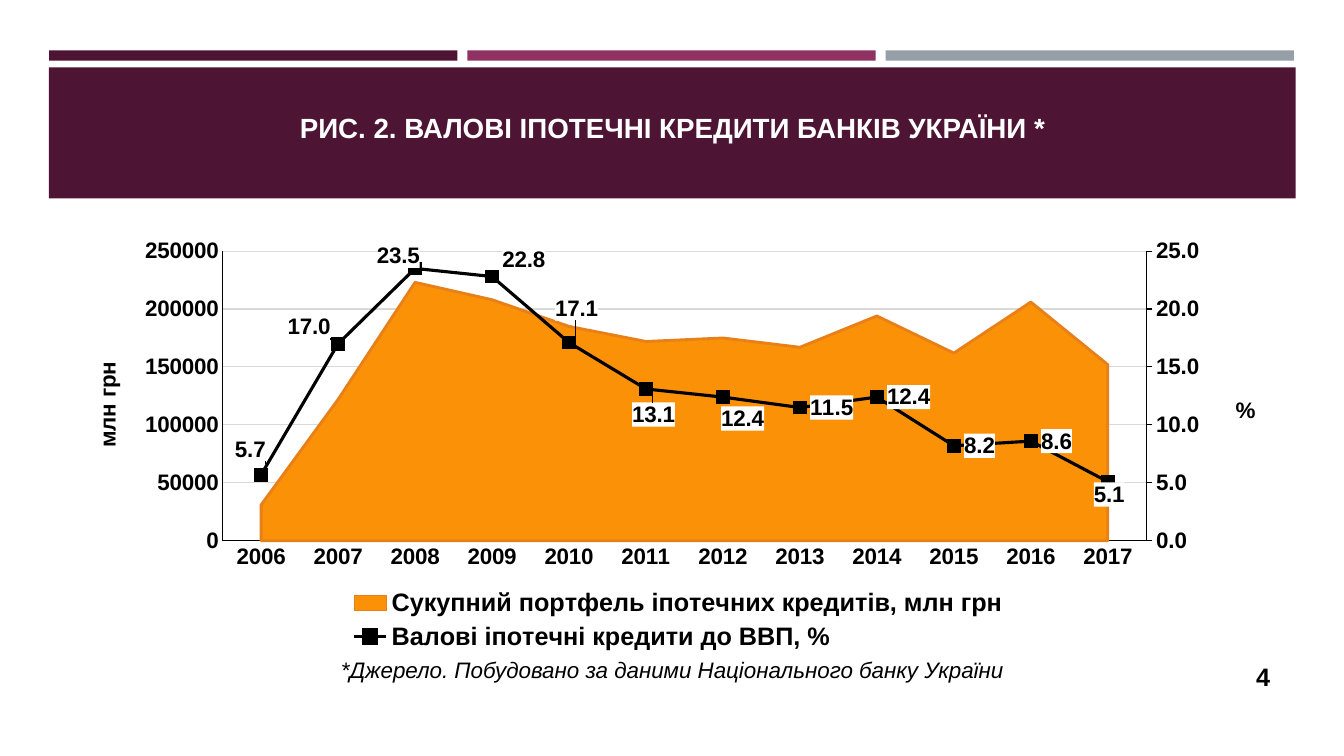
import copy
import dataclasses

import lxml.etree
import pptx
import pptx.chart.axis
import pptx.chart.data
import pptx.dml.color
import pptx.enum.chart
import pptx.enum.shapes
import pptx.enum.text
import pptx.oxml
import pptx.oxml.ns
import pptx.util

Cm, Pt, qn = pptx.util.Cm, pptx.util.Pt, pptx.oxml.ns.qn
Align, Anchor = pptx.enum.text.PP_ALIGN, pptx.enum.text.MSO_ANCHOR
Tick = pptx.enum.chart.XL_TICK_MARK
RIGHT_LABEL = pptx.enum.chart.XL_LABEL_POSITION.RIGHT
BLACK, WHITE, PLUM = "000000", "FFFFFF", "4D1434"
LEFT, WIDTH = 1.63, 30.63


@dataclasses.dataclass
class Bar:
    left: float
    top: float
    width: float
    height: float
    color: str


@dataclasses.dataclass
class LabelShift:
    point: int
    x: float
    y: float
    fill: str | None = None


BARS = [Bar(1.24 + 10.54 * i, 1.27, 10.29, 0.26, color)
        for i, color in enumerate([PLUM, "903163", "969FA7"])]
BARS.append(Bar(1.23, 1.7, 31.42, 3.3, PLUM))

PORTFOLIO = [31000, 122000, 223000, 208000, 185000, 172000,
             175000, 167000, 194000, 162000, 206000, 152000]
GDP_SHARE = [5.7, 17.0, 23.5, 22.8, 17.1, 13.1, 12.4, 11.5, 12.4, 8.2, 8.6, 5.1]
LABEL_SHIFTS = [
    LabelShift(0, -0.03, -0.06), LabelShift(1, -0.05, -0.04),
    LabelShift(2, -0.04, -0.03), LabelShift(3, 0, -0.04),
    LabelShift(4, -0.02, -0.08), LabelShift(5, -0.02, 0.06, WHITE),
    LabelShift(6, -0.01, 0.05, WHITE), LabelShift(11, -0.02, 0.03, WHITE),
]


def rgb(color: str) -> pptx.dml.color.RGBColor:
    return pptx.dml.color.RGBColor.from_string(color)


def set_font(font, size: float, color: str = BLACK, bold: bool = True,
             italic: bool = False) -> None:
    font.name, font.size, font.bold, font.italic = "Arial", Pt(size), bold, italic
    font.color.rgb = rgb(color)


def set_line(line, color: str, width: float) -> None:
    line.color.rgb = rgb(color)
    line.width = Pt(width)


def write_text(frame, text: str, *, size: float, align: Align = Align.CENTER,
               **font_format) -> None:
    para = frame.paragraphs[0]
    para.alignment = align
    span = para.add_run()
    span.text = text
    set_font(span.font, size, **font_format)


def write_box(box, text: str, **text_format) -> None:
    box.text_frame.word_wrap = True
    box.text_frame.vertical_anchor = Anchor.MIDDLE
    write_text(box.text_frame, text, **text_format)


def add_text(page, left: float, top: float, width: float, height: float,
             text: str, **text_format) -> None:
    box = page.shapes.add_textbox(Cm(left), Cm(top), Cm(width), Cm(height))
    write_box(box, text, **text_format)


def add_bar(page, bar: Bar) -> None:
    shape = page.shapes.add_shape(
        pptx.enum.shapes.MSO_SHAPE.RECTANGLE,
        Cm(bar.left), Cm(bar.top), Cm(bar.width), Cm(bar.height))
    shape.shadow.inherit = False
    shape.fill.solid()
    shape.fill.fore_color.rgb = rgb(bar.color)
    shape.line.fill.background()


def set_layout(parent, index: int, **values) -> None:
    """Place a chart part by fractions of the chart area."""
    for old in parent.findall(qn("c:layout")):
        parent.remove(old)
    layout = lxml.etree.Element(qn("c:layout"))
    manual = lxml.etree.SubElement(layout, qn("c:manualLayout"))
    for name, value in values.items():
        lxml.etree.SubElement(manual, qn(f"c:{name}")).set("val", str(value))
    parent.insert(index, layout)


def fill_labels(element, color: str) -> None:
    namespaces = pptx.oxml.ns.nsdecls("c", "a")
    element.find(qn("c:txPr")).addprevious(pptx.oxml.parse_xml(
        f'<c:spPr {namespaces}><a:solidFill><a:srgbClr val="{color}"/>'
        "</a:solidFill></c:spPr>"))


def split_to_line(plot_area) -> None:
    """Move the second series to a line plot with its own right axis."""
    area_plot = plot_area.find(qn("c:areaChart"))
    line_plot = pptx.oxml.parse_xml(
        f'<c:lineChart {pptx.oxml.ns.nsdecls("c")}><c:grouping val="standard"/>'
        '<c:varyColors val="0"/><c:marker val="1"/><c:axId val="501"/>'
        '<c:axId val="502"/></c:lineChart>')
    line_plot.insert(2, area_plot.findall(qn("c:ser"))[1])
    area_plot.addnext(line_plot)

    left_axis = plot_area.find(qn("c:valAx"))
    categories = copy.deepcopy(plot_area.find(qn("c:catAx")))
    values = copy.deepcopy(left_axis)
    for axis, own, other in ((categories, "501", "502"), (values, "502", "501")):
        axis.find(qn("c:axId")).set("val", own)
        axis.find(qn("c:crossAx")).set("val", other)
    values.find(qn("c:axPos")).set("val", "r")
    values.find(qn("c:crosses")).set("val", "max")
    left_axis.addnext(values)
    values.addnext(categories)
    pptx.chart.axis.CategoryAxis(categories).visible = False


def format_axis(axis, tick: Tick) -> None:
    axis.major_tick_mark, axis.minor_tick_mark = tick, Tick.NONE
    set_font(axis.tick_labels.font, 16)
    set_line(axis.format.line, BLACK, 0.75)


def format_value_axis(element, tick: Tick, top: float, step: float, number_format: str,
                      title: str, rotation: int, x: float, y: float) -> None:
    axis = pptx.chart.axis.ValueAxis(element)
    format_axis(axis, tick)
    axis.minimum_scale, axis.maximum_scale, axis.major_unit = 0, top, step
    axis.tick_labels.number_format = number_format
    axis.tick_labels.number_format_is_linked = False
    write_text(axis.axis_title.text_frame, title, size=16)
    title_element = element.find(qn("c:title"))
    body = title_element.find(".//" + qn("a:bodyPr"))
    body.set("rot", str(rotation * 60000))
    body.set("vert", "horz")
    set_layout(title_element, 1, xMode="edge", yMode="edge", x=x, y=y)
    between = element.find(qn("c:crossBetween"))
    if between is not None:
        between.set("val", "between")


def add_credit_chart(page) -> None:
    data = pptx.chart.data.CategoryChartData()
    data.categories = [str(year) for year in range(2006, 2018)]
    data.add_series("Сукупний портфель іпотечних кредитів, млн грн", PORTFOLIO, "0")
    data.add_series("Валові іпотечні кредити до ВВП, %", GDP_SHARE, "0.0")
    chart = page.shapes.add_chart(
        pptx.enum.chart.XL_CHART_TYPE.AREA,
        Cm(LEFT), Cm(5.79), Cm(WIDTH), Cm(10.74), data).chart
    chart.has_title = False
    set_font(chart.font, 16)
    plot_area = chart.element.find(".//" + qn("c:plotArea"))
    split_to_line(plot_area)
    set_layout(plot_area, 0, layoutTarget="inner", xMode="edge", yMode="edge",
               x=0.13, y=0.05, w=0.76, h=0.68)

    # Axes
    left, right = plot_area.findall(qn("c:valAx"))
    format_axis(chart.category_axis, Tick.NONE)
    format_value_axis(left, Tick.NONE, 250000, 50000, "0", "млн грн", -90, 0.02, 0.3)
    format_value_axis(right, Tick.OUTSIDE, 25, 5, "0.0", "%", 0, 0.96, 0.38)
    gridlines = pptx.chart.axis.ValueAxis(left).major_gridlines
    set_line(gridlines.format.line, "D9D9D9", 0.75)
    pptx.chart.axis.ValueAxis(right).has_major_gridlines = False

    # Series
    portfolio, share = chart.plots[0].series[0], chart.plots[1].series[0]
    portfolio.format.fill.solid()
    portfolio.format.fill.fore_color.rgb = rgb("FA9106")
    set_line(portfolio.format.line, "E78019", 2)
    chart.plots[0].vary_by_categories = False
    share.smooth = False
    set_line(share.format.line, BLACK, 2.25)
    share.marker.style = pptx.enum.chart.XL_MARKER_STYLE.SQUARE
    share.marker.size = 9
    share.marker.format.fill.solid()
    share.marker.format.fill.fore_color.rgb = rgb(BLACK)
    set_line(share.marker.format.line, BLACK, 0.75)

    # Data labels
    labels = share.data_labels
    labels.show_value, labels.position = True, RIGHT_LABEL
    set_font(labels.font, 16)
    labels_element = plot_area.find(
        "/".join(qn(tag) for tag in ("c:lineChart", "c:ser", "c:dLbls")))
    fill_labels(labels_element, WHITE)
    for shift in LABEL_SHIFTS:
        label = share.points[shift.point].data_label
        set_font(label.font, 16)
        label.position = RIGHT_LABEL
        element = labels_element.findall(qn("c:dLbl"))[-1]
        set_layout(element, 1, x=shift.x, y=shift.y)
        if shift.fill:
            fill_labels(element, shift.fill)

    # Legend
    chart.has_legend = True
    chart.legend.position = pptx.enum.chart.XL_LEGEND_POSITION.BOTTOM
    chart.legend.include_in_layout = False
    set_font(chart.legend.font, 18)
    set_layout(chart.element.find(".//" + qn("c:legend")), 1, xMode="edge",
               yMode="edge", x=0.22, y=0.83, w=0.57, h=0.17)


def main() -> None:
    deck = pptx.Presentation()
    deck.slide_width, deck.slide_height = Cm(33.87), Cm(19.05)
    page = deck.slides.add_slide(deck.slide_layouts[5])
    # Header bars and title
    for bar in BARS:
        add_bar(page, bar)
    title = page.shapes.title
    title.element.getparent().append(title.element)
    title.left, title.top, title.width, title.height = (
        Cm(LEFT), Cm(1.96), Cm(WIDTH), Cm(2.82))
    title.text_frame.margin_bottom = Cm(0.46)
    write_box(title, "РИС. 2. ВАЛОВІ ІПОТЕЧНІ КРЕДИТИ БАНКІВ УКРАЇНИ *",
              size=19.8, color=WHITE)
    # Chart, source note and page number
    add_credit_chart(page)
    add_text(page, LEFT, 16.27, WIDTH, 1.2,
             "*Джерело. Побудовано за даними Національного банку України",
             size=16, bold=False, italic=True)
    add_text(page, 29.34, 16.54, 2.92, 1.02, "4", size=18, align=Align.RIGHT)
    deck.save("out.pptx")


if __name__ == "__main__":
    main()
